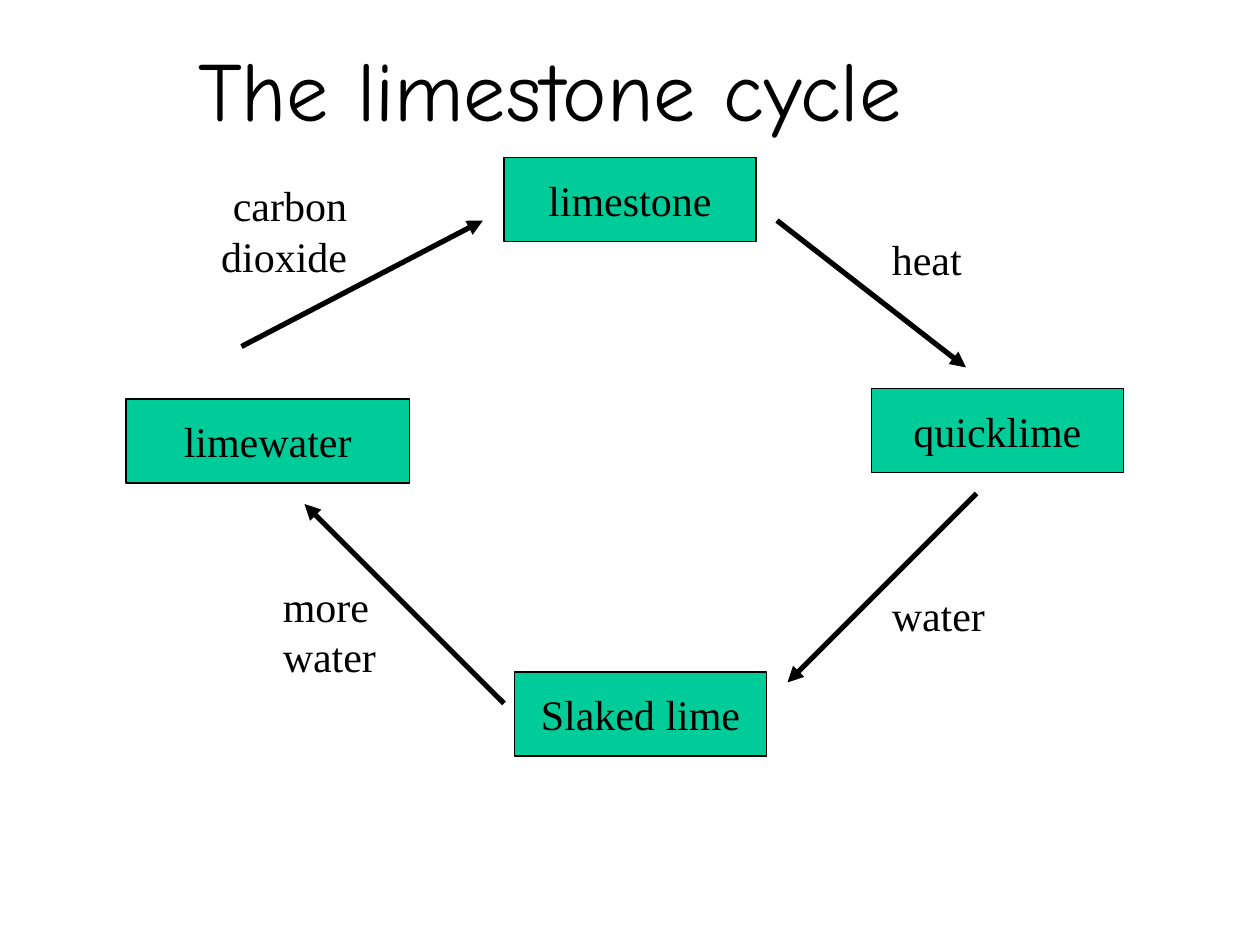
"""Build the limestone cycle slide."""
from dataclasses import dataclass

from lxml import etree
from pptx import Presentation
from pptx.dml.color import RGBColor
from pptx.enum.shapes import MSO_CONNECTOR, MSO_SHAPE
from pptx.enum.text import MSO_ANCHOR, MSO_AUTO_SIZE, PP_ALIGN
from pptx.oxml.ns import qn
from pptx.slide import Slide
from pptx.text.text import TextFrame
from pptx.util import Emu, Pt

RECT = MSO_SHAPE.RECTANGLE
LINE = MSO_CONNECTOR.STRAIGHT
LEFT, MID, RIGHT = PP_ALIGN.LEFT, PP_ALIGN.CENTER, PP_ALIGN.RIGHT
TOP, CENTER = MSO_ANCHOR.TOP, MSO_ANCHOR.MIDDLE
FIXED = MSO_AUTO_SIZE.NONE
TITLE_ONLY = 5


@dataclass(frozen=True)
class Theme:
    ink: RGBColor = RGBColor(0x00, 0x00, 0x00)
    fill: RGBColor = RGBColor(0x00, 0xCC, 0x99)
    head: str = "Comic Neue"
    body: str = "Times New Roman"
    big: Pt = Pt(48)
    text: Pt = Pt(24)
    lead: Pt = Pt(29)
    thin: Pt = Pt(0.75)
    thick: Pt = Pt(3)


@dataclass(frozen=True)
class Stage:
    text: str
    x: int
    y: int
    w: int = 192
    h: int = 64


@dataclass(frozen=True)
class Arrow:
    x1: int
    y1: int
    x2: int
    y2: int


@dataclass(frozen=True)
class Label:
    text: str
    x: int
    y: int
    w: int
    h: int
    align: PP_ALIGN = LEFT


THEME = Theme()

STAGES = [
    Stage("limestone", 384, 120),
    Stage("quicklime", 664, 296),
    Stage("Slaked lime", 392, 512),
    Stage("limewater", 96, 304, w=216),
]
ARROWS = [
    Arrow(592, 168, 736, 280),
    Arrow(744, 376, 600, 520),
    Arrow(384, 536, 232, 384),
    Arrow(184, 264, 368, 168),
]
LABELS = [
    Label("heat", 670, 173, 73, 48),
    Label("water", 670, 444, 90, 48),
    Label("more\nwater", 206, 437, 90, 86),
    Label("carbon\ndioxide", 151, 132, 123, 86, RIGHT),
]


def px(n: int) -> Emu:
    """Turn pixels into EMU."""
    return Emu(n * 9525)


def write(frame: TextFrame, text: str, align: PP_ALIGN) -> None:
    """Fill a frame with body text."""
    frame.text = text
    frame.word_wrap = False
    for para in frame.paragraphs:
        para.alignment = align
        para.line_spacing = THEME.lead
        for run in para.runs:
            run.font.name = THEME.body
            run.font.size = THEME.text
            run.font.color.rgb = THEME.ink


def add_title(slide: Slide, text: str) -> None:
    """Place and format the title."""
    title = slide.shapes.title
    title.left, title.top = px(103), px(24)
    title.width, title.height = px(674), px(86)
    frame = title.text_frame
    frame.text = text
    frame.auto_size = FIXED
    frame.vertical_anchor = TOP
    frame.margin_left = px(48)
    para = frame.paragraphs[0]
    para.alignment = LEFT
    font = para.runs[0].font
    font.name, font.size = THEME.head, THEME.big
    font.color.rgb = THEME.ink


def add_stage(slide: Slide, stage: Stage) -> None:
    """Draw one stage of the cycle."""
    box = slide.shapes.add_shape(
        RECT, px(stage.x), px(stage.y), px(stage.w), px(stage.h))
    box.shadow.inherit = False
    box.fill.solid()
    box.fill.fore_color.rgb = THEME.fill
    box.line.color.rgb = THEME.ink
    box.line.width = THEME.thin
    box.text_frame.vertical_anchor = CENTER
    write(box.text_frame, stage.text, MID)


def add_arrow(slide: Slide, arrow: Arrow) -> None:
    """Draw one arrow between stages."""
    link = slide.shapes.add_connector(
        LINE, px(arrow.x1), px(arrow.y1), px(arrow.x2), px(arrow.y2))
    link.line.color.rgb = THEME.ink
    link.line.width = THEME.thick
    etree.SubElement(link.line._get_or_add_ln(), qn("a:tailEnd"), type="triangle")
    etree.SubElement(link._element.spPr, qn("a:effectLst"))


def add_label(slide: Slide, label: Label) -> None:
    """Write the label of one arrow."""
    box = slide.shapes.add_textbox(
        px(label.x), px(label.y), px(label.w), px(label.h))
    write(box.text_frame, label.text, label.align)


def main() -> None:
    """Build and save the deck."""
    deck = Presentation()
    deck.slide_width, deck.slide_height = px(960), px(720)
    slide = deck.slides.add_slide(deck.slide_layouts[TITLE_ONLY])
    add_title(slide, "The limestone cycle")
    for stage in STAGES:
        add_stage(slide, stage)
    for arrow in ARROWS:
        add_arrow(slide, arrow)
    for label in LABELS:
        add_label(slide, label)
    deck.save("out.pptx")


if __name__ == "__main__":
    main()
